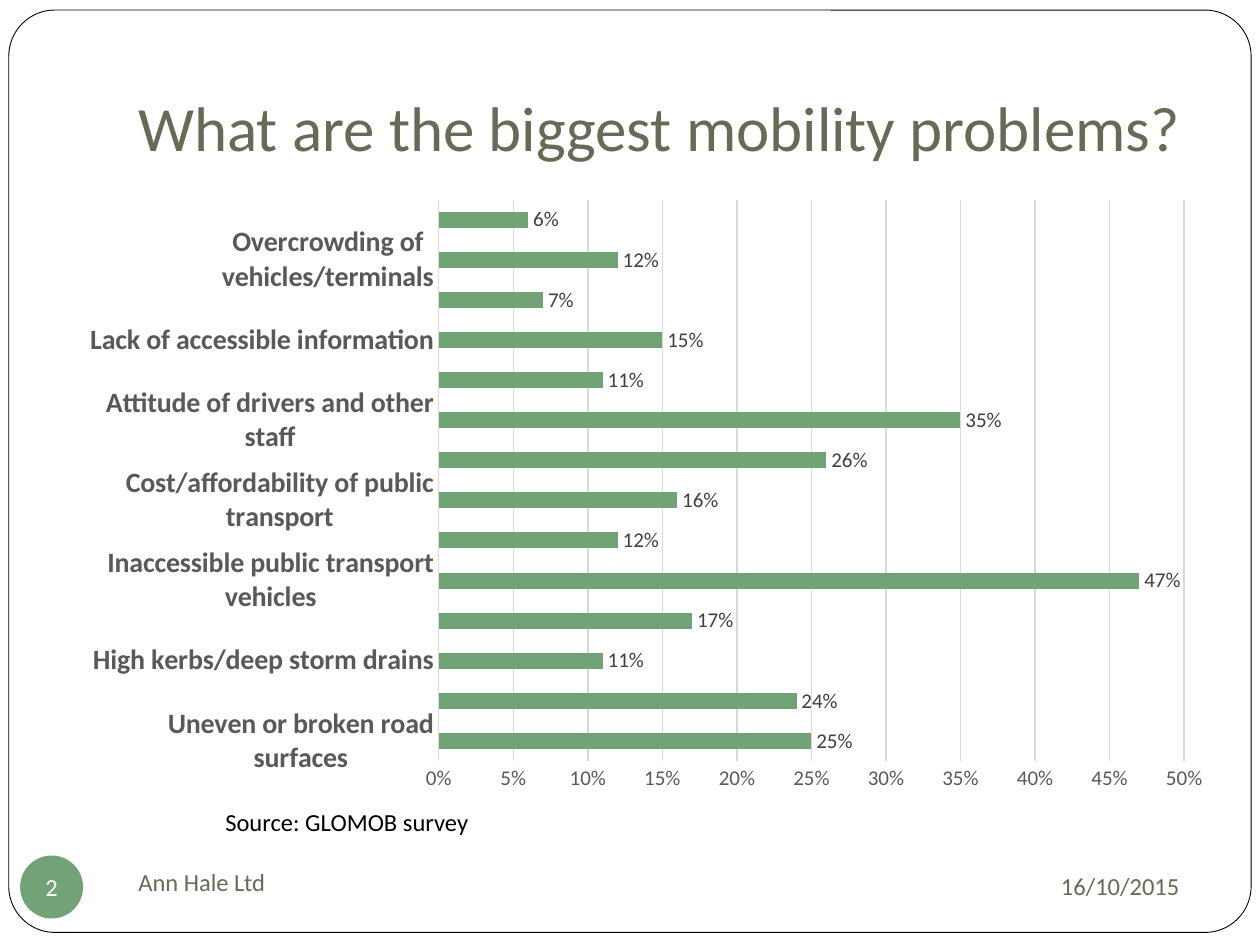
from dataclasses import dataclass

from lxml import etree
from pptx import Presentation
from pptx.chart.data import CategoryChartData
from pptx.dml.color import RGBColor
from pptx.enum.chart import XL_CHART_TYPE as ChartType
from pptx.enum.chart import XL_LABEL_POSITION as LabelPosition
from pptx.enum.chart import XL_TICK_MARK as TickMark
from pptx.enum.shapes import MSO_SHAPE as ShapeKind
from pptx.enum.text import MSO_ANCHOR as Anchor
from pptx.enum.text import PP_ALIGN as Align
from pptx.oxml.ns import qn
from pptx.util import Inches, Pt


@dataclass(frozen=True)
class Theme:
    font: str = "Calibri"
    white: str = "FFFFFF"
    black: str = "000000"
    green: str = "72A376"
    olive: str = "676A55"
    axis_text: str = "595959"
    label_text: str = "404040"
    grid: str = "D9D9D9"
    title_size: int = 36
    category_size: int = 16
    body_size: int = 14
    value_size: int = 12


THEME = Theme()

PROBLEM_PAIRS = [
    ("Uneven or broken road surfaces", 0.25, 0.24),
    ("High kerbs/deep storm drains", 0.11, 0.17),
    ("Inaccessible public transport vehicles", 0.47, 0.12),
    ("Cost/affordability of public transport", 0.16, 0.26),
    ("Attitude of drivers and other staff", 0.35, 0.11),
    ("Lack of accessible information", 0.15, 0.07),
    ("Overcrowding of vehicles/terminals", 0.12, 0.06),
]


def color(value):
    return RGBColor.from_string(value)


def inches(box):
    return [Inches(length) for length in box]


def style_font(font, size, rgb, bold=False):
    font.name = THEME.font
    font.size = Pt(size)
    font.bold = bold
    font.color.rgb = color(rgb)


def write_text(shape, text, size=THEME.body_size, rgb=THEME.olive, align=Align.LEFT,
               anchor=Anchor.MIDDLE, margins=(0.1, 0.05, 0.1, 0.05), wrap=True):
    frame = shape.text_frame
    frame.word_wrap = wrap
    frame.vertical_anchor = anchor
    (frame.margin_left, frame.margin_top,
     frame.margin_right, frame.margin_bottom) = inches(margins)
    paragraph = frame.paragraphs[0]
    paragraph.alignment = align
    run = paragraph.add_run()
    run.text = text
    style_font(run.font, size, rgb)


def add_text(slide, box, text, **text_format):
    write_text(slide.shapes.add_textbox(*inches(box)), text, **text_format)


def add_filled_shape(slide, kind, box, fill):
    shape = slide.shapes.add_shape(kind, *inches(box))
    shape.shadow.inherit = False
    shape.fill.solid()
    shape.fill.fore_color.rgb = color(fill)
    shape.line.fill.background()
    return shape


def add_frame(slide, box):
    frame = add_filled_shape(slide, ShapeKind.ROUNDED_RECTANGLE, box, THEME.white)
    frame.adjustments[0] = 0.05
    frame.line.color.rgb = color(THEME.black)
    frame.line.width = Pt(0.5)


def add_footer(slide, box):
    left, top, width, height = box
    add_text(slide, (left + 0.84, top - 0.04, 4.33, height), "Ann Hale Ltd")
    add_text(slide, (left + width - 2.71, top - 0.02, 2.71, height + 0.02), "16/10/2015",
             align=Align.RIGHT)
    badge = add_filled_shape(slide, ShapeKind.OVAL, (left, top, height, height), THEME.green)
    write_text(badge, "2", rgb=THEME.white, align=Align.CENTER,
               margins=(0, 0, 0, 0), wrap=False)


def set_plot_layout(chart, **fractions):
    plot_area = chart._chartSpace.chart.plotArea
    for old_layout in plot_area.findall(qn("c:layout")):
        plot_area.remove(old_layout)
    layout = etree.Element(qn("c:layout"))
    manual = etree.SubElement(layout, qn("c:manualLayout"))
    settings = {"layoutTarget": "inner", "xMode": "edge", "yMode": "edge", **fractions}
    for name, value in settings.items():
        etree.SubElement(manual, qn(f"c:{name}")).set("val", str(value))
    plot_area.insert(0, layout)


def style_axis(axis, size, bold=False):
    axis.major_tick_mark = axis.minor_tick_mark = TickMark.NONE
    axis.format.line.fill.background()
    style_font(axis.tick_labels.font, size, THEME.axis_text, bold)


def add_problem_chart(slide, box):
    data = CategoryChartData(number_format="0%")
    data.categories = [label for name, *_ in PROBLEM_PAIRS for label in (name, "")]
    data.add_series("Series 1", [share for _, *shares in PROBLEM_PAIRS for share in shares])
    chart = slide.shapes.add_chart(ChartType.BAR_CLUSTERED, *inches(box), data).chart
    chart.has_title = chart.has_legend = False
    style_font(chart.font, 10, THEME.black)
    set_plot_layout(chart, x=0.314, y=0, w=0.658, h=0.892)

    style_axis(chart.category_axis, THEME.category_size, bold=True)
    chart.category_axis.has_major_gridlines = False
    value_axis = chart.value_axis
    style_axis(value_axis, THEME.value_size)
    value_axis.minimum_scale, value_axis.maximum_scale = 0, 0.5
    value_axis.major_unit = 0.05
    value_axis.tick_labels.number_format = "0%"
    value_axis.tick_labels.number_format_is_linked = False
    value_axis.has_major_gridlines = True
    grid_line = value_axis.major_gridlines.format.line
    grid_line.color.rgb = color(THEME.grid)
    grid_line.width = Pt(0.75)

    plot = chart.plots[0]
    plot.gap_width = 150
    plot.vary_by_categories = False
    series = plot.series[0]
    series.format.fill.solid()
    series.format.fill.fore_color.rgb = color(THEME.green)
    labels = series.data_labels
    labels.show_value = True
    labels.number_format = "0%"
    labels.number_format_is_linked = False
    labels.position = LabelPosition.OUTSIDE_END
    style_font(labels.font, THEME.value_size, THEME.label_text)


def main():
    presentation = Presentation()
    presentation.slide_width, presentation.slide_height = Inches(10), Inches(7.5)
    slide = presentation.slides.add_slide(presentation.slide_layouts[6])
    add_frame(slide, (0.07, 0.08, 9.86, 7.32))
    add_text(slide, (1, 0.3, 8.5, 1.1), "What are the biggest mobility problems?",
             size=THEME.title_size, anchor=Anchor.BOTTOM, margins=(0.1, 0.05, 0.1, 0.1))
    add_footer(slide, (0.16, 6.79, 9.3, 0.5))
    add_problem_chart(slide, (0.66, 1.58, 8.99, 5))
    add_text(slide, (1.69, 6.36, 3.23, 0.34), "Source: GLOMOB survey",
             rgb=THEME.black, anchor=Anchor.TOP)
    presentation.save("out.pptx")


if __name__ == "__main__":
    main()
